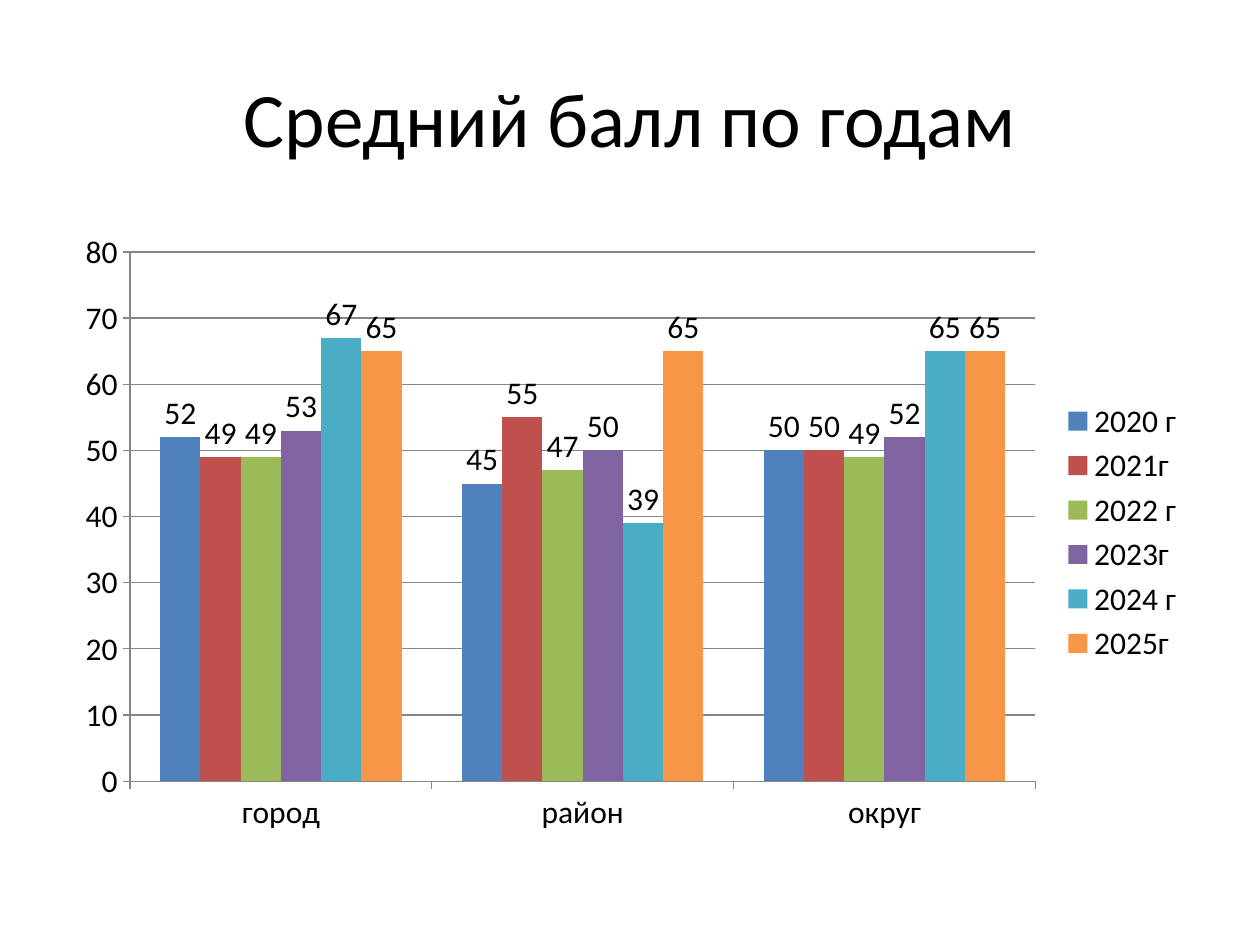
from dataclasses import dataclass
from typing import Any

from pptx import Presentation
from pptx.chart.data import CategoryChartData
from pptx.dml.color import RGBColor
from pptx.enum.chart import XL_CHART_TYPE, XL_LABEL_POSITION, XL_LEGEND_POSITION, XL_TICK_MARK
from pptx.enum.text import MSO_ANCHOR, PP_ALIGN
from pptx.util import Inches, Pt

COLORS = {
    "background": "FFFFFF",
    "text": "000000",
    "grid": "868686",
    "blue": "4F81BD",
    "red": "C0504D",
    "green": "9BBB59",
    "purple": "8064A2",
    "teal": "4BACC6",
    "orange": "F79646",
}
FONT = "Calibri"
REGIONS = ("город", "район", "округ")


@dataclass(frozen=True)
class YearScores:
    name: str
    scores: tuple[int, ...]
    color: str


YEARS = (
    YearScores("2020 г", (52, 45, 50), "blue"),
    YearScores("2021г", (49, 55, 50), "red"),
    YearScores("2022 г", (49, 47, 49), "green"),
    YearScores("2023г", (53, 50, 52), "purple"),
    YearScores("2024 г", (67, 39, 65), "teal"),
    YearScores("2025г", (65, 65, 65), "orange"),
)


def rgb(name: str) -> RGBColor:
    return RGBColor.from_string(COLORS[name])


def apply_format(target: Any, values: dict[str, Any]) -> None:
    for name, value in values.items():
        setattr(target, name, value)


def style_font(font: Any, size: int) -> None:
    apply_format(font, {"name": FONT, "size": Pt(size)})
    font.color.rgb = rgb("text")


def style_line(line: Any) -> None:
    line.color.rgb = rgb("grid")
    line.width = Pt(0.75)


def add_title(page: Any, text: str) -> None:
    box = page.shapes.add_textbox(Inches(0.5), Inches(0.3), Inches(9), Inches(1.25))
    apply_format(box.text_frame, {"word_wrap": True, "vertical_anchor": MSO_ANCHOR.MIDDLE})
    para = box.text_frame.paragraphs[0]
    para.alignment = PP_ALIGN.CENTER
    span = para.add_run()
    span.text = text
    style_font(span.font, 44)


def style_series(series: Any, year: YearScores) -> None:
    series.invert_if_negative = False
    series.format.fill.solid()
    series.format.fill.fore_color.rgb = rgb(year.color)
    labels = series.data_labels
    apply_format(labels, {"show_value": True, "position": XL_LABEL_POSITION.OUTSIDE_END})
    style_font(labels.font, 18)


def add_score_chart(page: Any) -> None:
    data = CategoryChartData()
    data.categories = REGIONS
    for year in YEARS:
        data.add_series(year.name, year.scores)
    chart = page.shapes.add_chart(
        XL_CHART_TYPE.COLUMN_CLUSTERED,
        Inches(0.5), Inches(1.75), Inches(9), Inches(4.95), data,
    ).chart
    style_font(chart.font, 18)
    apply_format(chart, {"has_title": False, "has_legend": True})
    apply_format(chart.legend, {"position": XL_LEGEND_POSITION.RIGHT, "include_in_layout": False})

    plot = chart.plots[0]
    apply_format(plot, {"gap_width": 150, "overlap": 0, "vary_by_categories": False})
    for series, year in zip(plot.series, YEARS):
        style_series(series, year)

    for axis in (chart.category_axis, chart.value_axis):
        axis.major_tick_mark = XL_TICK_MARK.OUTSIDE
        style_line(axis.format.line)
    apply_format(
        chart.value_axis,
        {"minimum_scale": 0, "maximum_scale": 80, "major_unit": 10, "has_major_gridlines": True},
    )
    style_line(chart.value_axis.major_gridlines.format.line)


def main() -> None:
    deck = Presentation()
    apply_format(deck, {"slide_width": Inches(10), "slide_height": Inches(7.5)})
    page = deck.slides.add_slide(deck.slide_layouts[6])
    page.background.fill.solid()
    page.background.fill.fore_color.rgb = rgb("background")
    add_score_chart(page)
    add_title(page, "Средний балл по годам")
    deck.save("out.pptx")


if __name__ == "__main__":
    main()
